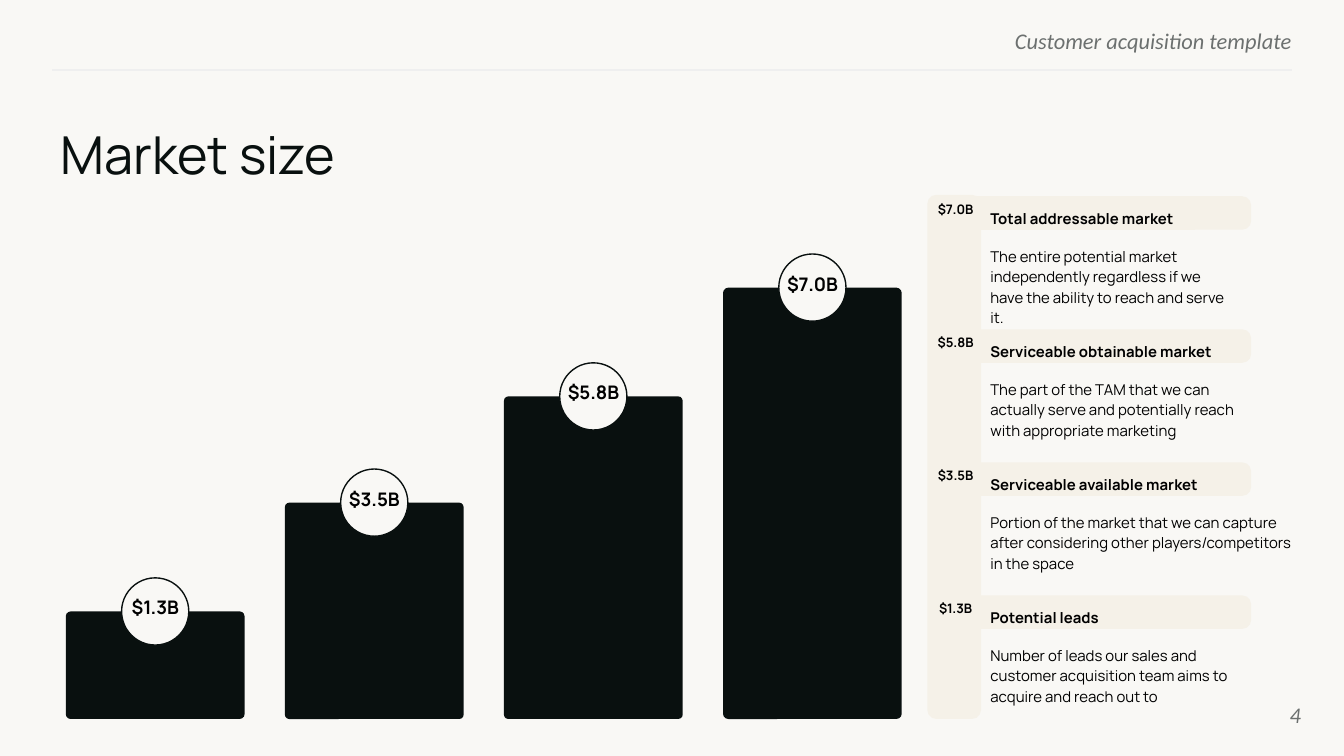
"""Build the market size slide with stepped bars and a legend of market tiers."""
from lxml.etree import SubElement
from pptx import Presentation
from pptx.dml.color import RGBColor
from pptx.enum.shapes import MSO_CONNECTOR, MSO_SHAPE
from pptx.enum.text import MSO_ANCHOR, PP_ALIGN
from pptx.oxml.ns import qn
from pptx.util import Inches, Pt

PAPER = RGBColor(0xF9, 0xF8, 0xF5)
SAND = RGBColor(0xF5, 0xF1, 0xE8)
INK = RGBColor(0x09, 0x10, 0x0F)
BLACK = RGBColor(0, 0, 0)
GREY = RGBColor(0x6C, 0x70, 0x6F)
RULE = RGBColor(0xEF, 0xEF, 0xEF)

BARS = [("$1.3B", 0.8, 0.044), ("$3.5B", 1.61, 0.024), ("$5.8B", 2.4, 0.024), ("$7.0B", 3.21, 0.03)]
BAR_LEFT, BAR_WIDTH, BAR_PITCH, BASELINE = 0.49, 1.33, 1.63, 5.35
BADGE = 0.5

TIERS = [
    ("$7.0B", "Total addressable market", 2.02,
     "The entire potential market independently regardless if we have the ability to reach and serve it."),
    ("$5.8B", "Serviceable obtainable market", 2.08,
     "The part of the TAM that we can actually serve and potentially reach with appropriate marketing"),
    ("$3.5B", "Serviceable available market", 2.52,
     "Portion of the market that we can capture after considering other players/competitors in the space"),
    ("$1.3B", "Potential leads", 2.18,
     "Number of leads our sales and customer acquisition team aims to acquire and reach out to"),
]
TIER_TOP, TIER_PITCH, TIER_LEFT = 1.46, 0.99, 7.27


class SlidePainter:
    def __init__(self, page, font="Manrope"):
        self.page = page
        self.font = font
        page.background.fill.solid()
        page.background.fill.fore_color.rgb = PAPER

    def shape(self, kind, left, top, width, height, fill, radius=None, line=None):
        shape = self.page.shapes.add_shape(kind, Inches(left), Inches(top), Inches(width), Inches(height))
        shape.shadow.inherit = False
        shape.fill.solid()
        shape.fill.fore_color.rgb = fill
        if radius is not None:
            shape.adjustments[0] = radius
        if line is None:
            shape.line.fill.background()
        else:
            shape.line.color.rgb = line
            shape.line.width = Pt(0.75)

    def rule(self, left, right, top):
        rule = self.page.shapes.add_connector(
            MSO_CONNECTOR.STRAIGHT, Inches(left), Inches(top), Inches(right), Inches(top))
        rule.line.color.rgb = RULE
        rule.line.width = Pt(0.75)
        SubElement(rule._element.spPr, qn("a:effectLst"))

    def text(self, words, left, top, width, height, size, color=BLACK, bold=False, italic=False,
             font=None, align=PP_ALIGN.LEFT, anchor=MSO_ANCHOR.TOP, spacing=1.0, margins=(0, 0)):
        box = self.page.shapes.add_textbox(Inches(left), Inches(top), Inches(width), Inches(height))
        frame = box.text_frame
        frame.word_wrap = True
        frame.vertical_anchor = anchor
        frame.margin_left = frame.margin_right = Inches(margins[0])
        frame.margin_top = frame.margin_bottom = Inches(margins[1])
        frame.text = words
        para = frame.paragraphs[0]
        para.alignment = align
        para.line_spacing = spacing
        style = para.runs[0].font
        style.name = font or self.font
        style.size = Pt(size)
        style.bold = bold
        style.italic = italic
        style.color.rgb = color

    def furniture(self, words, left, top, width, height, anchor=MSO_ANCHOR.TOP):
        self.text(words, left, top, width, height, 12, GREY, italic=True, font="Calibri",
                  align=PP_ALIGN.RIGHT, anchor=anchor)

    def value(self, words, left, top, width, height, size):
        self.text(words, left, top, width, height, size, bold=True,
                  align=PP_ALIGN.CENTER, spacing=0.9, margins=(0.1, 0.1))

    def bar(self, index, value, height, radius):
        left = BAR_LEFT + index * BAR_PITCH
        top = BASELINE - height
        center = left + BAR_WIDTH / 2
        badge_top = top - BADGE / 2
        self.shape(MSO_SHAPE.ROUNDED_RECTANGLE, left, top, BAR_WIDTH, height, INK, radius)
        self.shape(MSO_SHAPE.OVAL, center - BADGE / 2, badge_top, BADGE, BADGE, PAPER, line=INK)
        self.value(value, center - 0.31, badge_top + 0.08, 0.62, 0.35, 10)

    def tier(self, index, value, heading, width, body):
        top = TIER_TOP + index * TIER_PITCH
        self.shape(MSO_SHAPE.ROUNDED_RECTANGLE, 6.91, top, 2.4, 0.25, SAND, 0.27)
        self.text(body, TIER_LEFT, top + 0.31, width, 0.58, 8, spacing=1.15, margins=(0.1, 0.05))
        self.text(heading, TIER_LEFT, top + 0.03, 2.02, 0.25, 8, bold=True, spacing=1.15, margins=(0.1, 0.05))
        self.value(value, 6.84, top, 0.54, 0.31, 7)


def main():
    deck = Presentation()
    deck.slide_width = Inches(10)
    deck.slide_height = deck.slide_width * 9 // 16
    painter = SlidePainter(deck.slides.add_slide(deck.slide_layouts[6]))

    painter.furniture("Customer acquisition template", 5.76, 0.2, 3.85, 0.18)
    painter.rule(0.39, 9.61, 0.52)
    painter.text("Market size", 0.45, 0.91, 9.23, 0.51, 28, INK)
    painter.furniture("4", 9.08, 5.1, 0.6, 0.43, MSO_ANCHOR.MIDDLE)

    painter.shape(MSO_SHAPE.ROUNDED_RECTANGLE, 6.9, 1.45, 0.4, 3.9, SAND, 0.17)
    for index, bar in enumerate(BARS):
        painter.bar(index, *bar)
    for index, tier in enumerate(TIERS):
        painter.tier(index, *tier)

    deck.save("out.pptx")


if __name__ == "__main__":
    main()
